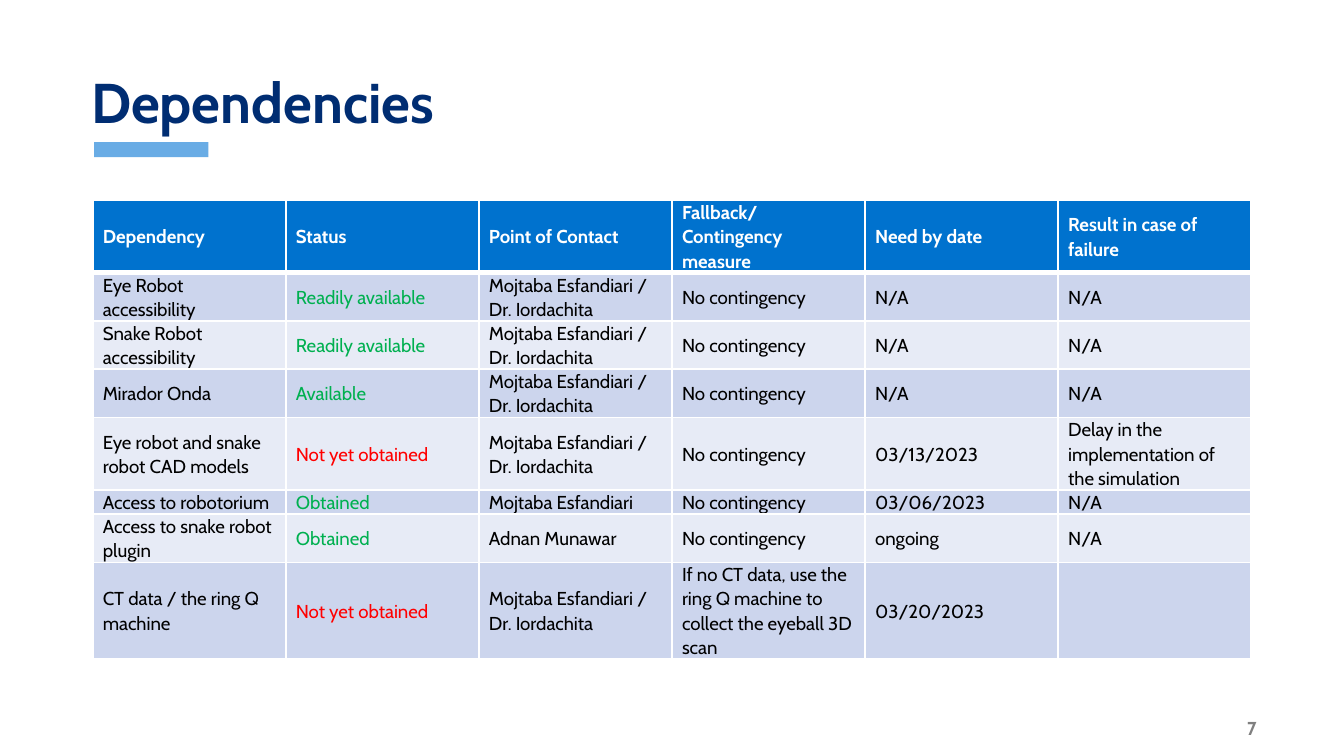
"""Build the project dependencies slide with its status table."""
from dataclasses import dataclass

import pptx
import pptx.dml.color
import pptx.enum.shapes
import pptx.enum.text
import pptx.oxml
import pptx.oxml.ns
import pptx.util

FONT = "Cabin"
COLORS = {
    "title": "002D72", "accent": "69ACE5", "header": "0072CE",
    "band_dark": "CCD5ED", "band_light": "E7EBF6", "white": "FFFFFF",
    "black": "000000", "good": "00B050", "bad": "FF0000", "page": "808080",
}
SLIDE_WIDTH = pptx.util.Inches(10)
SLIDE_HEIGHT = SLIDE_WIDTH * 9 // 16


@dataclass(frozen=True)
class Area:
    """A rectangle in percent of the slide's width and height."""
    left: float
    top: float
    width: float
    height: float

    def lengths(self) -> tuple[int, int, int, int]:
        """Return left, top, width and height in EMU."""
        return (int(SLIDE_WIDTH * self.left / 100), int(SLIDE_HEIGHT * self.top / 100),
                int(SLIDE_WIDTH * self.width / 100), int(SLIDE_HEIGHT * self.height / 100))


@dataclass(frozen=True)
class Style:
    """The look of one run of text."""
    size: float
    color: str
    bold: bool = False


@dataclass(frozen=True)
class Dependency:
    """One table row and the number of text lines it needs."""
    lines: int
    name: str
    status: str
    contact: str
    fallback: str = "No contingency"
    need_by: str = "N/A"
    failure: str = "N/A"

    def texts(self) -> tuple[str, ...]:
        """Return the cell texts from left to right."""
        return (self.name, self.status, self.contact,
                self.fallback, self.need_by, self.failure)


LEADS = "Mojtaba Esfandiari / Dr. Iordachita"
HEADINGS = Dependency(3, "Dependency", "Status", "Point of Contact",
                      "Fallback/Contingency measure", "Need by date",
                      "Result in case of failure")
DEPENDENCIES = [
    Dependency(2, "Eye Robot accessibility", "Readily available", LEADS),
    Dependency(2, "Snake Robot accessibility", "Readily available", LEADS),
    Dependency(2, "Mirador Onda", "Available", LEADS),
    Dependency(3, "Eye robot and snake robot CAD models", "Not yet obtained", LEADS,
               need_by="03/13/2023",
               failure="Delay in the implementation of the simulation"),
    Dependency(1, "Access to robotorium", "Obtained", "Mojtaba Esfandiari",
               need_by="03/06/2023"),
    Dependency(2, "Access to snake robot plugin", "Obtained", "Adnan Munawar",
               need_by="ongoing"),
    Dependency(4, "CT data / the ring Q machine", "Not yet obtained", LEADS,
               "If no CT data, use the ring Q machine to collect the eyeball 3D scan",
               "03/20/2023", ""),
]


def rgb(name: str) -> pptx.dml.color.RGBColor:
    """Look up a named colour."""
    return pptx.dml.color.RGBColor.from_string(COLORS[name])


def add_run(paragraph, text: str, style: Style) -> None:
    """Append one styled run."""
    run = paragraph.add_run()
    run.text = text
    run.font.name = FONT
    run.font.size = pptx.util.Pt(style.size)
    run.font.bold = style.bold
    run.font.color.rgb = rgb(style.color)


def add_label(slide, area: Area, text: str, style: Style,
              anchor: pptx.enum.text.MSO_ANCHOR, align: pptx.enum.text.PP_ALIGN,
              spacing: float = 1.0, inset: float = 0.1) -> None:
    """Add a one-line text box."""
    frame = slide.shapes.add_textbox(*area.lengths()).text_frame
    frame.word_wrap = True
    frame.vertical_anchor = anchor
    frame.margin_left = frame.margin_right = pptx.util.Inches(inset)
    paragraph = frame.paragraphs[0]
    paragraph.alignment = align
    paragraph.line_spacing = spacing
    add_run(paragraph, text, style)


def add_borders(cell, top: int, bottom: int) -> None:
    """Draw white cell borders, 1 pt wide at the sides."""
    properties = cell._tc.get_or_add_tcPr()
    for side, width in (("L", 1), ("R", 1), ("T", top), ("B", bottom)):
        properties.append(pptx.oxml.parse_xml(
            f'<a:ln{side} {pptx.oxml.ns.nsdecls("a")} w="{pptx.util.Pt(width)}">'
            f'<a:solidFill><a:srgbClr val="{COLORS["white"]}"/></a:solidFill>'
            f'</a:ln{side}>'))


def fill_cell(cell, text: str, style: Style, fill: str, top: int, bottom: int) -> None:
    """Write and colour one table cell."""
    add_borders(cell, top, bottom)
    cell.fill.solid()
    cell.fill.fore_color.rgb = rgb(fill)
    cell.vertical_anchor = pptx.enum.text.MSO_ANCHOR.MIDDLE
    cell.margin_left = cell.margin_right = pptx.util.Pt(5.4)
    cell.margin_top = cell.margin_bottom = 0
    paragraph = cell.text_frame.paragraphs[0]
    paragraph.line_spacing = 1.07
    paragraph.space_after = pptx.util.Pt(8)
    if text:
        add_run(paragraph, text, style)


def body_color(column: int, text: str) -> str:
    """Choose the text colour, marking the status column."""
    if column != 1:
        return "black"
    return "bad" if text.startswith("Not") else "good"


def add_dependency_table(slide, area: Area) -> None:
    """Add the table, with row heights in proportion to their lines."""
    rows = [HEADINGS, *DEPENDENCIES]
    columns = len(HEADINGS.texts())
    table = slide.shapes.add_table(len(rows), columns, *area.lengths()).table
    line_height = area.lengths()[3] / sum(row.lines for row in rows)
    for index, row in enumerate(rows):
        table.rows[index].height = int(line_height * row.lines)
        is_header = index == 0
        fill = "header" if is_header else "band_dark" if index % 2 else "band_light"
        for column, text in enumerate(row.texts()):
            color = "white" if is_header else body_color(column, text)
            fill_cell(table.cell(index, column), text, Style(10, color, is_header), fill,
                      top=3 if index == 1 else 1, bottom=3 if is_header else 1)


def add_accent(slide, area: Area) -> None:
    """Add the bar under the title."""
    bar = slide.shapes.add_shape(pptx.enum.shapes.MSO_SHAPE.RECTANGLE, *area.lengths())
    bar.shadow.inherit = False
    bar.fill.solid()
    bar.fill.fore_color.rgb = rgb("accent")
    bar.line.fill.background()


def main() -> None:
    """Build and save the presentation."""
    deck = pptx.Presentation()
    deck.slide_width, deck.slide_height = SLIDE_WIDTH, SLIDE_HEIGHT
    slide = deck.slides.add_slide(deck.slide_layouts[6])
    anchors, aligns = pptx.enum.text.MSO_ANCHOR, pptx.enum.text.PP_ALIGN
    add_accent(slide, Area(7, 18.8, 8.5, 2))
    add_label(slide, Area(86.3, 94.6, 8.7, 3.4), "7", Style(10, "page", True),
              anchors.MIDDLE, aligns.RIGHT, inset=0.15)
    add_label(slide, Area(5.8, 2.1, 88.4, 16.7), "Dependencies",
              Style(30, "title", True), anchors.BOTTOM, aligns.LEFT, spacing=0.9)
    add_dependency_table(slide, Area(6.9, 26.5, 86.2, 60.7))
    deck.save("out.pptx")


if __name__ == "__main__":
    main()
